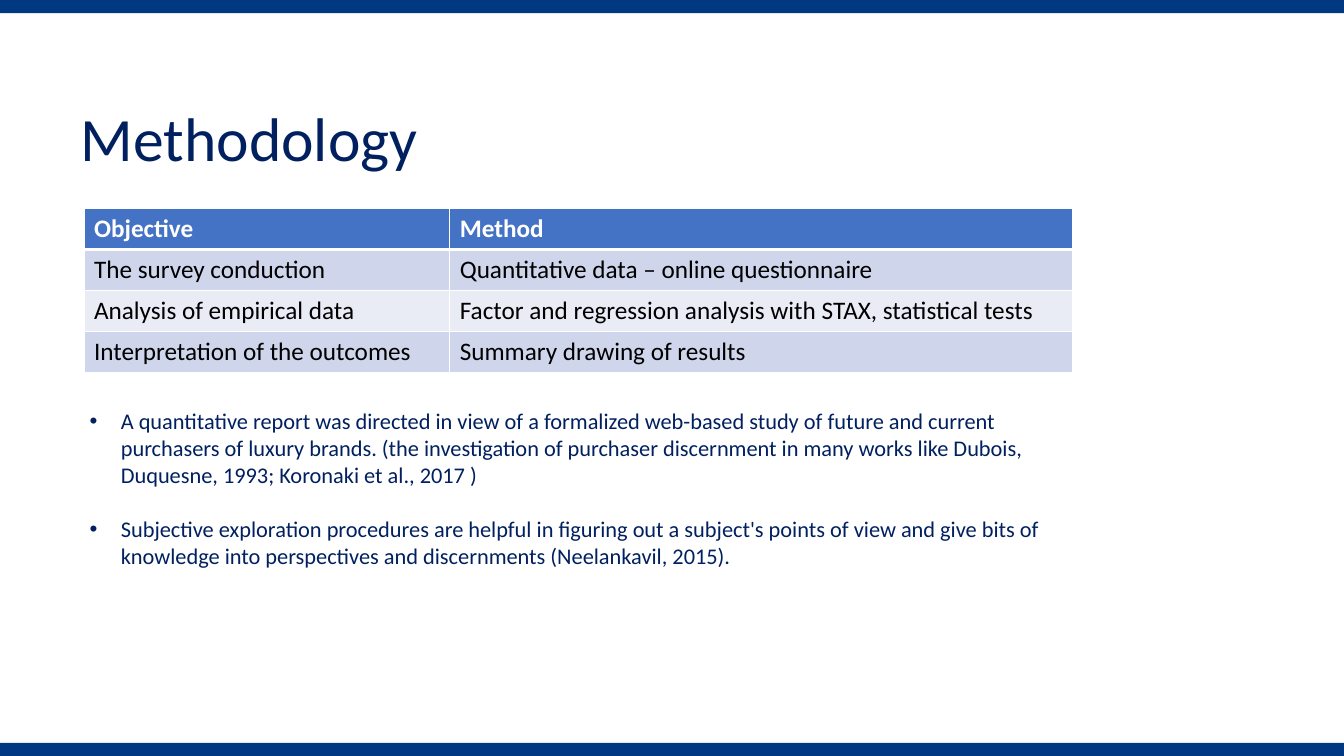
import pptx
import pptx.util
import pptx.dml.color
import pptx.enum.shapes
import pptx.enum.text
import pptx.oxml
import pptx.oxml.ns

RGBColor = pptx.dml.color.RGBColor
NAVY = RGBColor(0x00, 0x20, 0x60)
BAR_BLUE = RGBColor(0x01, 0x38, 0x82)
HEADER_BLUE = RGBColor(0x44, 0x72, 0xC4)
BAND_DARK = RGBColor(0xCF, 0xD5, 0xEA)
BAND_LIGHT = RGBColor(0xE9, 0xEB, 0xF5)
WHITE = RGBColor(0xFF, 0xFF, 0xFF)
BLACK = RGBColor(0x00, 0x00, 0x00)

# The slide is a grid of 100 columns by 100 rows
SLIDE_WIDTH = pptx.util.Inches(13.33)
SLIDE_HEIGHT = pptx.util.Inches(7.5)
BAR_ROWS = 1.73
OBJECTIVE_SHARE = 0.37

METHODS = [
    ("Objective", "Method"),
    ("The survey conduction", "Quantitative data – online questionnaire"),
    ("Analysis of empirical data",
     "Factor and regression analysis with STAX, statistical tests"),
    ("Interpretation of the outcomes", "Summary drawing of results"),
]
NOTES = [
    "A quantitative report was directed in view of a formalized web-based study "
    "of future and current purchasers of luxury brands. (the investigation of "
    "purchaser discernment in many works like Dubois, Duquesne, 1993; "
    "Koronaki et al., 2017 )",
    "Subjective exploration procedures are helpful in figuring out a subject's "
    "points of view and give bits of knowledge into perspectives and "
    "discernments (Neelankavil, 2015).",
]


def grid_box(column, row, columns, rows):
    return (int(SLIDE_WIDTH * column / 100), int(SLIDE_HEIGHT * row / 100),
            int(SLIDE_WIDTH * columns / 100), int(SLIDE_HEIGHT * rows / 100))


def apply_format(target, values):
    for name, value in values.items():
        setattr(target, name, value)


def style_font(font, size, color, bold=False):
    apply_format(font, {"name": "Calibri", "size": pptx.util.Pt(size), "bold": bold})
    font.color.rgb = color


def set_indent(paragraph, left, first):
    properties = paragraph._p.get_or_add_pPr()
    properties.set("marL", str(pptx.util.Inches(left)))
    properties.set("indent", str(pptx.util.Inches(first)))
    return properties


def add_bar(slide, box):
    bar = slide.shapes.add_shape(pptx.enum.shapes.MSO_SHAPE.RECTANGLE, *box)
    bar.shadow.inherit = False
    bar.fill.solid()
    bar.fill.fore_color.rgb = BAR_BLUE
    bar.line.fill.background()


def add_title(slide, box):
    frame = slide.shapes.add_textbox(*box).text_frame
    inset = pptx.util.Inches(0.13)
    apply_format(frame, {
        "word_wrap": True, "margin_left": inset, "margin_right": inset,
        "margin_top": inset, "margin_bottom": inset,
        "vertical_anchor": pptx.enum.text.MSO_ANCHOR.TOP})
    title = frame.paragraphs[0]
    set_indent(title, 0.56, 0)
    apply_format(title, {"text": "Methodology", "line_spacing": 1.5,
                         "alignment": pptx.enum.text.PP_ALIGN.JUSTIFY})
    style_font(title.font, 44, NAVY)


def set_borders(cell, widths):
    properties = cell._tc.get_or_add_tcPr()
    for position, (side, width) in enumerate(widths.items()):
        border = pptx.oxml.parse_xml(
            f'<a:{side} {pptx.oxml.ns.nsdecls("a")} w="{pptx.util.Pt(width)}">'
            f'<a:solidFill><a:srgbClr val="{WHITE}"/></a:solidFill></a:{side}>')
        properties.insert(position, border)


def add_methods_table(slide, box):
    table = slide.shapes.add_table(len(METHODS), len(METHODS[0]), *box).table
    table.columns[0].width = int(box[2] * OBJECTIVE_SHARE)
    table.columns[1].width = box[2] - table.columns[0].width
    for row, entries in enumerate(METHODS):
        header = row == 0
        band = HEADER_BLUE if header else BAND_DARK if row % 2 else BAND_LIGHT
        for column, entry in enumerate(entries):
            cell = table.cell(row, column)
            cell.text = entry
            cell.fill.solid()
            cell.fill.fore_color.rgb = band
            style_font(cell.text_frame.paragraphs[0].runs[0].font, 18,
                       WHITE if header else BLACK, header)
            set_borders(cell, {"lnL": 1, "lnR": 1, "lnT": 3 if row == 1 else 1,
                               "lnB": 3 if header else 1})


def add_notes_list(slide, box):
    frame = slide.shapes.add_textbox(*box).text_frame
    apply_format(frame, {"word_wrap": True,
                         "auto_size": pptx.enum.text.MSO_AUTO_SIZE.SHAPE_TO_FIT_TEXT})
    for index, note in enumerate(NOTES):
        paragraph = frame.add_paragraph() if index else frame.paragraphs[0]
        paragraph.text = note
        properties = set_indent(paragraph, 0.31, -0.31)
        if index:
            paragraph.space_before = pptx.util.Pt(19.5)
        for bullet in ('buFont {} typeface="Arial"', 'buChar {} char="•"'):
            properties.append(pptx.oxml.parse_xml(
                "<a:" + bullet.format(pptx.oxml.ns.nsdecls("a")) + "/>"))
        style_font(paragraph.font, 16, NAVY)


def build_methodology_slide(presentation):
    slide = presentation.slides.add_slide(presentation.slide_layouts[6])
    # Title
    add_title(slide, grid_box(0.83, 6.53, 51.67, 14.4))
    # Bars along the bottom and top edges
    for row in (100 - BAR_ROWS, 0):
        add_bar(slide, grid_box(0, row, 100, BAR_ROWS))
    # Objectives with their methods
    add_methods_table(slide, grid_box(6.25, 27.6, 73.55, 21.63))
    # Notes on the method
    add_notes_list(slide, grid_box(5.93, 53.2, 73.5, 22.93))


def main():
    presentation = pptx.Presentation()
    apply_format(presentation, {"slide_width": SLIDE_WIDTH,
                                "slide_height": SLIDE_HEIGHT})
    build_methodology_slide(presentation)
    presentation.save("out.pptx")


if __name__ == "__main__":
    main()
